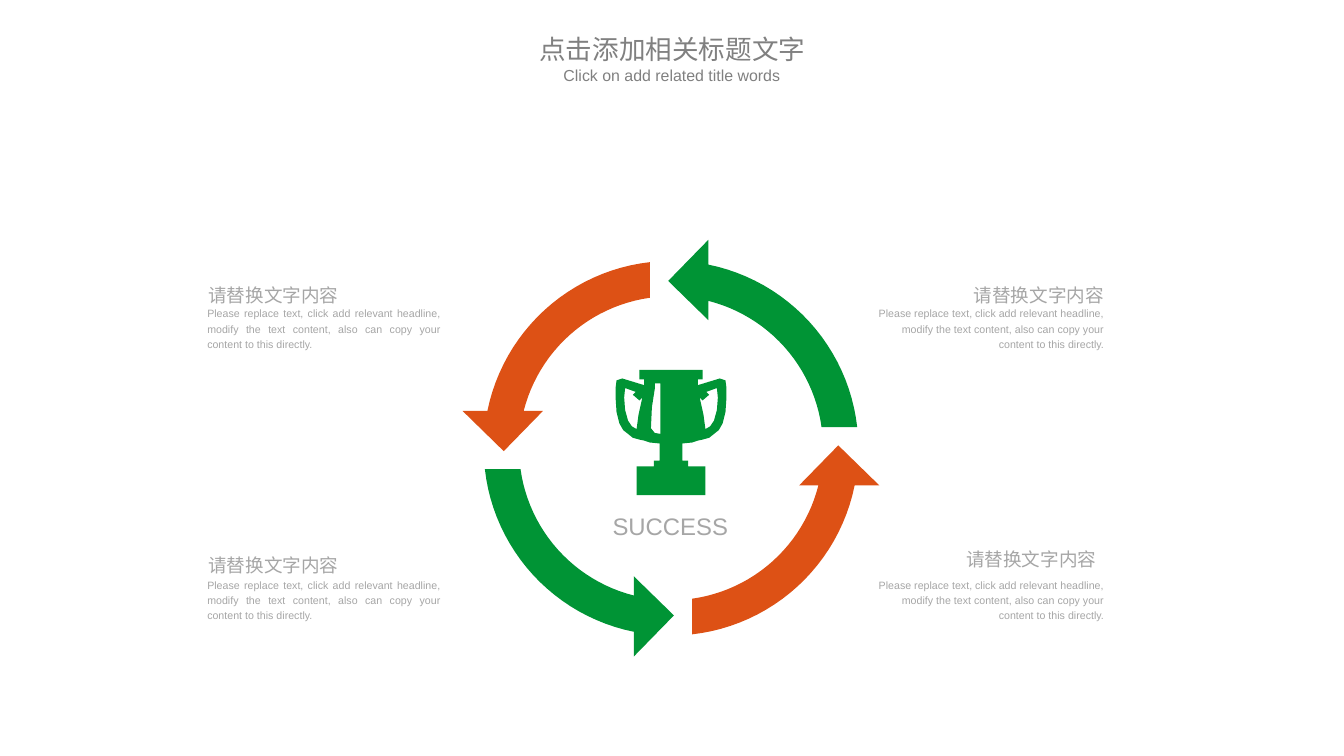
from math import asin, cos, radians, sin

from lxml.etree import SubElement
from pptx import Presentation
from pptx.dml.color import RGBColor
from pptx.enum.text import MSO_ANCHOR, MSO_AUTO_SIZE, PP_ALIGN as AL
from pptx.oxml.ns import qn
from pptx.util import Inches, Pt

GREEN = RGBColor(0x00, 0x94, 0x35)
ORANGE = RGBColor(0xDD, 0x51, 0x15)
GREY = RGBColor(0x80, 0x80, 0x80)
LIGHT_GREY = RGBColor(0xA6, 0xA6, 0xA6)
HEADING = "请替换文字内容"
BODY = ("Please replace text, click add relevant headline, modify the text content, "
        "also can copy your content to this directly.")


def write(sp, box, text, size, color, align, spacing=1.0, wrap=True):
    sp.left, sp.top, sp.width, sp.height = [Inches(v) for v in box]
    tf = sp.text_frame
    tf.text = text
    tf.word_wrap = wrap
    tf.auto_size = MSO_AUTO_SIZE.NONE
    tf.vertical_anchor = MSO_ANCHOR.TOP
    p = tf.paragraphs[0]
    p.alignment = align
    p.line_spacing = spacing
    p.space_before = Pt(0)
    font = p.runs[0].font
    font.size = Pt(size)
    font.color.rgb = color
    font.name = "Arial"
    SubElement(font._element, qn("a:ea")).set("typeface", "Noto Sans CJK SC")


def draw(contours, color):
    contours = [[(Inches(x), Inches(y)) for x, y in c] for c in contours]
    fb = s.shapes.build_freeform(*contours[0][0])
    fb.add_line_segments(contours[0][1:])
    for c in contours[1:]:
        fb.move_to(*c[0])
        fb.add_line_segments(c[1:])
    sp = fb.convert_to_shape()
    sp.shadow.inherit = False
    sp.fill.solid()
    sp.fill.fore_color.rgb = color
    sp.line.fill.background()


prs = Presentation()
prs.slide_width, prs.slide_height = Inches(14.06), Inches(7.91)
s = prs.slides.add_slide(prs.slide_layouts[0])

write(s.shapes.title, (5.36, 0.29, 3.35, 0.41), "点击添加相关标题文字", 20, GREY, AL.CENTER)
write(s.placeholders[1], (5.76, 0.64, 2.54, 0.41), "Click on add related title words",
      12, GREY, AL.CENTER)

CX, CY = 7.02, 4.69
OUTER, INNER = 1.96, 1.59
HEAD_X, TAIL_Y, STEPS = 0.39, 0.22, 24
arrow = [(HEAD_X, -1.34), (-0.03, -1.75), (HEAD_X, -2.18)]
for radius in (OUTER, INNER):
    start = asin(HEAD_X / radius)
    end = radians(90) - asin(TAIL_Y / radius)
    angles = [start + (end - start) * i / STEPS for i in range(STEPS + 1)]
    if radius == INNER:
        angles.reverse()
    arrow += [(radius * sin(a), -radius * cos(a)) for a in angles]

for quarter, color in enumerate([GREEN, ORANGE, GREEN, ORANGE]):
    turn = radians(90 * quarter)
    draw([[(CX + x * cos(turn) - y * sin(turn), CY + x * sin(turn) + y * cos(turn))
           for x, y in arrow]], color)

cup_side = [
    (6.69, 3.87), (6.69, 3.97), (6.74, 3.97), (6.74, 4.03), (6.51, 3.96), (6.45, 3.98),
    (6.44, 4.06), (6.44, 4.16), (6.45, 4.31), (6.48, 4.43), (6.52, 4.5), (6.57, 4.54),
    (6.62, 4.58), (6.69, 4.6), (6.74, 4.61), (6.8, 4.63), (6.9, 4.64), (6.9, 4.82),
    (6.84, 4.82), (6.84, 4.88), (6.66, 4.88), (6.66, 5.18)]
handle_gap = [
    (6.72, 4.16), (6.68, 4.34), (6.66, 4.49), (6.61, 4.46), (6.57, 4.4), (6.54, 4.29),
    (6.53, 4.16), (6.54, 4.06), (6.65, 4.1), (6.62, 4.13), (6.69, 4.19)]
shine = [(6.91, 4.01), (6.91, 4.54), (6.85, 4.53), (6.81, 4.48), (6.82, 4.26), (6.85, 4.07),
         (6.85, 4.01)]
cup = cup_side + [(2 * CX - x, y) for x, y in reversed(cup_side)]
right_gap = [(2 * CX - x, y) for x, y in handle_gap]
draw([cup, handle_gap, right_gap, shine], GREEN)

labels = [((6.31, 5.24, 1.42, 0.43), "SUCCESS", 18, AL.JUSTIFY, False)]
for x, y, body_x, body_y, body_w, head_align, body_align in [
    (2.08, 2.88, 2.07, 3.14, 2.64, AL.LEFT, AL.JUSTIFY),
    (2.08, 5.7, 2.07, 5.98, 2.64, AL.LEFT, AL.JUSTIFY),
    (9.99, 5.64, 9.08, 5.98, 2.57, AL.RIGHT, AL.RIGHT),
    (10.07, 2.88, 9.08, 3.14, 2.57, AL.RIGHT, AL.RIGHT),
]:
    labels.append(((x, y, 1.58, 0.36), HEADING, 14, head_align, False))
    labels.append(((body_x, body_y, body_w, 0.57), BODY, 8, body_align, True))

for box, text, size, align, wrap in labels:
    sp = s.shapes.add_textbox(0, 0, 0, 0)
    write(sp, box, text, size, LIGHT_GREY, align, 1.2, wrap)

prs.save("out.pptx")
